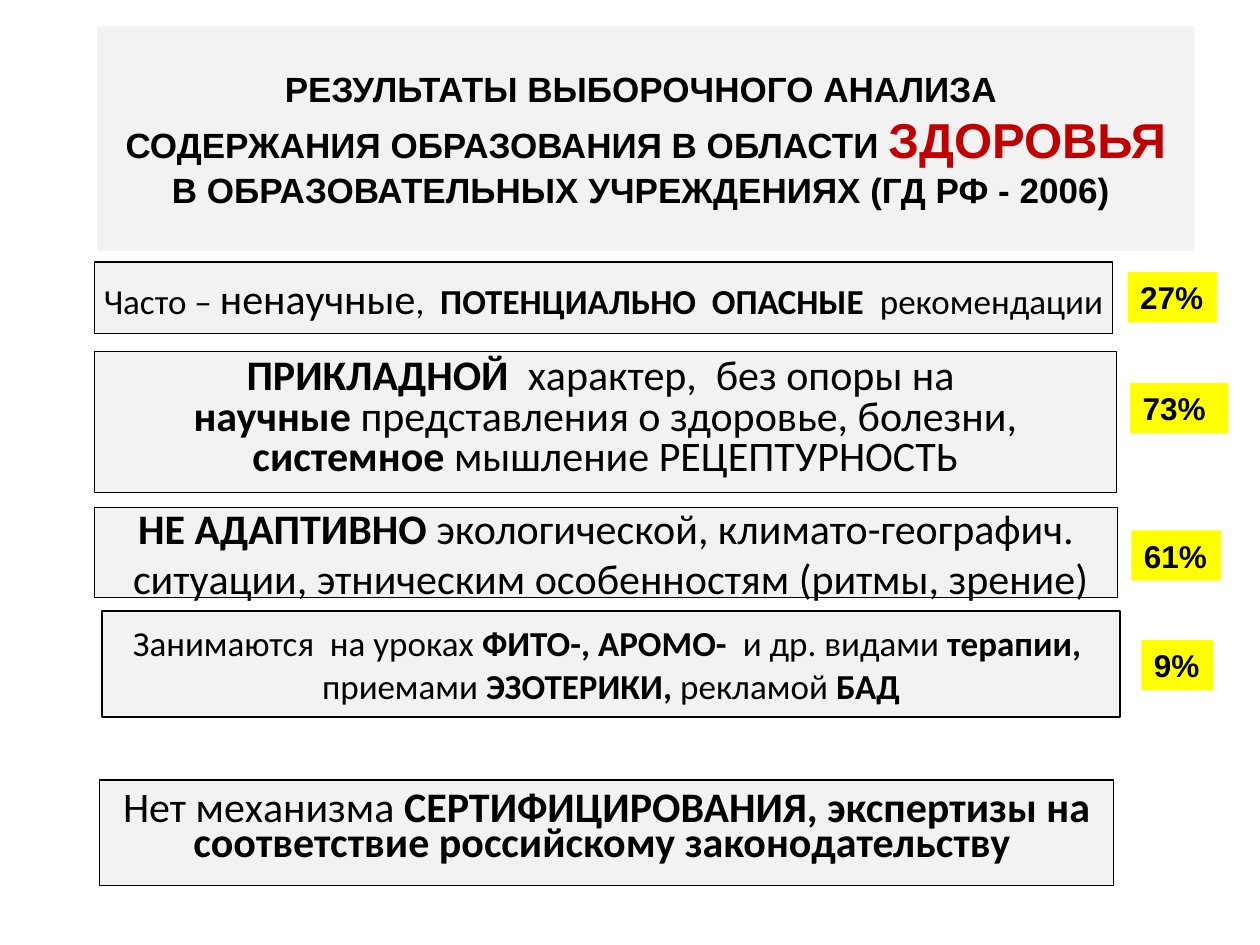
from dataclasses import dataclass, field

from pptx import Presentation
from pptx.dml.color import RGBColor
from pptx.enum.shapes import MSO_SHAPE
from pptx.enum.text import MSO_ANCHOR, PP_ALIGN
from pptx.util import Inches, Pt

RECT = MSO_SHAPE.RECTANGLE
MIDDLE = MSO_ANCHOR.MIDDLE
CENTER, LEFT = PP_ALIGN.CENTER, PP_ALIGN.LEFT
COLS, ROWS = 100, 75


@dataclass
class Theme:
    panel: str = "F2F2F2"
    mark: str = "FFFF00"
    ink: str = "000000"
    alert: str = "C00000"
    head: str = "Arial"
    body: str = "Calibri"
    rule: float = 0.75
    sizes: dict = field(default_factory=lambda: {
        "title": 20, "hero": 28, "text": 20, "large": 24, "tag": 18})


class Deck:
    def __init__(self, theme):
        self.theme = theme
        self.prs = Presentation()
        self.prs.slide_width, self.prs.slide_height = Inches(10), Inches(7.5)
        self.slide = self.prs.slides.add_slide(self.prs.slide_layouts[6])

    def rect(self, box, fill, line=False):
        x, y, w, h = box
        dx, dy = self.prs.slide_width / COLS, self.prs.slide_height / ROWS
        shape = self.slide.shapes.add_shape(
            RECT, int(x * dx), int(y * dy), int(w * dx), int(h * dy))
        shape.shadow.inherit = False
        shape.fill.solid()
        shape.fill.fore_color.rgb = RGBColor.from_string(fill)
        if line:
            shape.line.color.rgb = RGBColor.from_string(self.theme.ink)
            shape.line.width = Pt(self.theme.rule)
        else:
            shape.line.fill.background()
        return shape

    def label(self, shape, lines, base, wrap=False, align=CENTER, space=None):
        """Each line is a list of (text, changes to the base format)."""
        frame = shape.text_frame
        frame.word_wrap, frame.vertical_anchor = wrap, MIDDLE
        for i, line in enumerate(lines):
            para = frame.paragraphs[0] if i == 0 else frame.add_paragraph()
            para.alignment = align
            if space:
                para.line_spacing = space
            for text, change in line:
                look = base | change
                run = para.add_run()
                run.text = text
                run.font.color.rgb = RGBColor.from_string(look["ink"])
                values = {"name": look["name"], "bold": look["bold"],
                          "size": Pt(self.theme.sizes[look["size"]])}
                for key, value in values.items():
                    setattr(run.font, key, value)

    def title(self, box, lines):
        t = self.theme
        base = {"name": t.head, "bold": True, "size": "title", "ink": t.ink}
        self.label(self.rect(box, t.panel), lines, base, wrap=True)

    def panel(self, box, lines, size, space=None, lift=0):
        t = self.theme
        shape = self.rect(box, t.panel, line=True)
        shape.text_frame.margin_bottom = Inches(0.05 + lift)
        base = {"name": t.body, "bold": False, "size": size, "ink": t.ink}
        self.label(shape, lines, base, space=space)

    def tag(self, box, text):
        t = self.theme
        base = {"name": t.head, "bold": True, "size": "tag", "ink": t.ink}
        self.label(self.rect(box, t.mark), [[(text, {})]], base, align=LEFT)


def main():
    theme = Theme()
    deck = Deck(theme)
    plain, bold = {}, {"bold": True}
    hero = {"size": "hero", "ink": theme.alert}

    # Heading
    deck.title((7.7, 2.1, 87.1, 17.8), [
        [("РЕЗУЛЬТАТЫ ВЫБОРОЧНОГО АНАЛИЗА ", plain)],
        [("СОДЕРЖАНИЯ ОБРАЗОВАНИЯ В ОБЛАСТИ ", plain), ("ЗДОРОВЬЯ", hero)],
        [("В ОБРАЗОВАТЕЛЬНЫХ УЧРЕЖДЕНИЯХ (ГД РФ - 2006) ", plain)],
    ])

    # Findings: box, size, line spacing, lift, lines
    panels = [
        ((7.5, 20.8, 80.8, 5.7), "text", None, 0, [
            [("Часто – ", plain), ("ненаучные", {"size": "large"}),
             (",  ", plain), ("ПОТЕНЦИАЛЬНО  ОПАСНЫЕ", bold),
             ("  рекомендации", plain)]]),
        ((7.5, 27.9, 81.1, 11.2), "large", 0.8, 0.05, [
            [("ПРИКЛАДНОЙ  ", bold), ("характер,  без опоры на ", plain)],
            [("научные", bold),
             (" представления о здоровье, болезни,", plain)],
            [("системное", bold), (" мышление РЕЦЕПТУРНОСТЬ", plain)]]),
        ((7.5, 40.3, 81.2, 7.1), "large", None, 0, [
            [("НЕ АДАПТИВНО ", bold),
             ("экологической, климато-географич.", plain)],
            [(" ситуации, этническим особенностям (ритмы, зрение)", plain)]]),
        ((8.1, 48.5, 80.8, 8.4), "text", None, 0, [
            [("Занимаются  на уроках ", plain), ("ФИТО-, АРОМО-  ", bold),
             ("и др. видами ", plain), ("терапии, ", bold)],
            [("приемами ", plain), ("ЭЗОТЕРИКИ,", bold),
             (" рекламой ", plain), ("БАД", bold)]]),
        ((7.9, 61.9, 80.5, 8.4), "large", 0.7, 0.05, [
            [("Нет механизма ", plain),
             ("СЕРТИФИЦИРОВАНИЯ, экспертизы на", bold)],
            [("соответствие российскому законодательству ", bold)]]),
    ]
    for box, size, space, lift, lines in panels:
        deck.panel(box, lines, size, space, lift)

    # Shares
    tags = [(89.5, 21.6, 7.1, "27%"), (89.7, 30.4, 7.8, "73% "),
            (89.8, 42.1, 7.1, "61%"), (90.6, 50.8, 5.7, "9%")]
    for x, y, w, text in tags:
        deck.tag((x, y, w, 4), text)

    deck.prs.save("out.pptx")


if __name__ == "__main__":
    main()
